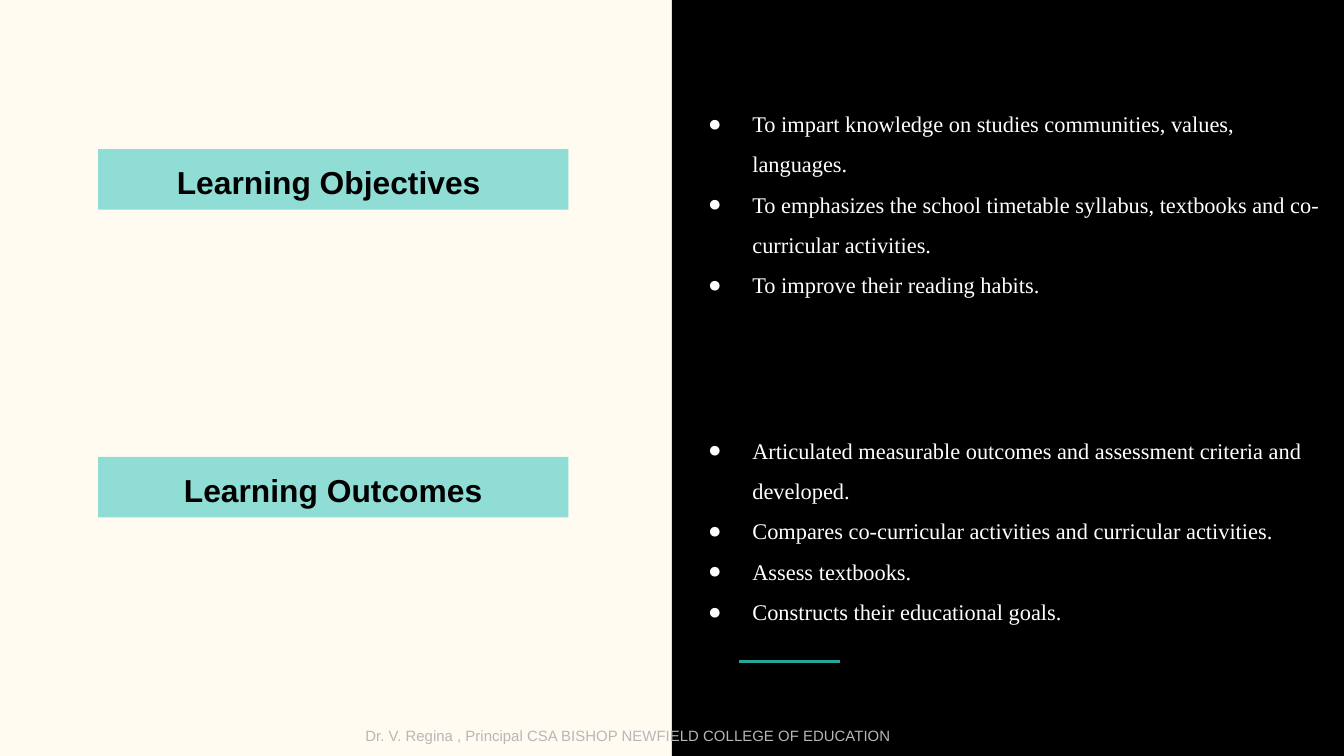
from lxml import etree
from pptx import Presentation
from pptx.dml.color import RGBColor
from pptx.enum import shapes, text
from pptx.oxml import ns
from pptx.util import Inches, Pt

CREAM = RGBColor(0xFF, 0xFB, 0xF0)
BLACK = RGBColor(0, 0, 0)
WHITE = RGBColor(0xFF, 0xFF, 0xFF)
MINT = RGBColor(0x90, 0xDD, 0xD6)
TEAL = RGBColor(0x26, 0xA6, 0x9A)
GRAY = RGBColor(0xB7, 0xB7, 0xB7)

# Widescreen slide, 16 to 9
prs = Presentation()
prs.slide_width = Inches(10)
prs.slide_height = Inches(10) * 9 // 16
slide = prs.slides.add_slide(prs.slide_layouts[6])
slide.background.fill.solid()
slide.background.fill.fore_color.rgb = CREAM


def add_rect(x, y, w, h, color):
    box = slide.shapes.add_shape(shapes.MSO_SHAPE.RECTANGLE, x, y, w, h)
    box.shadow.inherit = False
    box.fill.solid()
    box.fill.fore_color.rgb = color
    box.line.fill.background()
    return box


def write(box, lines, size, font, color, bold=False):
    frame = box.text_frame
    frame.word_wrap = True
    frame.vertical_anchor = text.MSO_ANCHOR.TOP
    frame.margin_left = frame.margin_right = Inches(0.1)
    frame.margin_top = frame.margin_bottom = Inches(0.1)
    for i, line in enumerate(lines):
        para = frame.add_paragraph() if i else frame.paragraphs[0]
        run = para.add_run()
        run.text = line
        run.font.size = Pt(size)
        run.font.name = font
        run.font.bold = bold
        run.font.color.rgb = color
    return frame.paragraphs


# Dark right half with a short accent line
add_rect(Inches(5), 0, Inches(5), prs.slide_height, BLACK)
rule = slide.shapes.add_connector(shapes.MSO_CONNECTOR.STRAIGHT,
                                  Inches(5.5), Inches(4.92), Inches(6.25), Inches(4.92))
rule.line.color.rgb = TEAL
rule.line.width = Pt(1.5)
etree.SubElement(rule._element.spPr, ns.qn("a:effectLst"))

# Headings on the left
for y, head in [(1.11, "Learning Objectives "), (3.4, "Learning Outcomes")]:
    bar = add_rect(Inches(0.73), Inches(y), Inches(3.5), Inches(0.45), MINT)
    for para in write(bar, [head], 17, "Arial", BLACK, True):
        para.alignment = text.PP_ALIGN.CENTER

# Bulleted lists on the right
lists = [
    (0.62, 1.83, ["To impart knowledge on studies communities, values, languages.",
                  "To emphasizes the school timetable syllabus, textbooks and co-curricular activities.",
                  "To improve their reading habits."]),
    (3.05, 1.64, ["Articulated measurable outcomes and assessment criteria and developed.",
                  "Compares co-curricular activities and curricular activities.",
                  "Assess textbooks.",
                  "Constructs their educational goals."]),
]
for y, h, items in lists:
    box = slide.shapes.add_textbox(Inches(5), Inches(y), Inches(5), Inches(h))
    for para in write(box, items, 12, "Times New Roman", WHITE):
        para.line_spacing = 1.5
        props = para._p.get_or_add_pPr()
        props.set("marL", str(Inches(0.5)))
        props.set("indent", str(Inches(-0.33)))
        tint = etree.SubElement(props, ns.qn("a:buClr"))
        etree.SubElement(tint, ns.qn("a:srgbClr"), val=str(WHITE))
        etree.SubElement(props, ns.qn("a:buSzPts"), val="1200")
        etree.SubElement(props, ns.qn("a:buFont"), typeface="Times New Roman")
        etree.SubElement(props, ns.qn("a:buChar"), char="●")

# Footer
foot = slide.shapes.add_textbox(Inches(2.62), Inches(5.34), Inches(5.45), Inches(0.28))
write(foot, ["Dr. V. Regina , Principal CSA BISHOP NEWFIELD COLLEGE OF EDUCATION"],
      8, "Arial", GRAY)
foot.text_frame.auto_size = text.MSO_AUTO_SIZE.SHAPE_TO_FIT_TEXT

prs.save("out.pptx")
